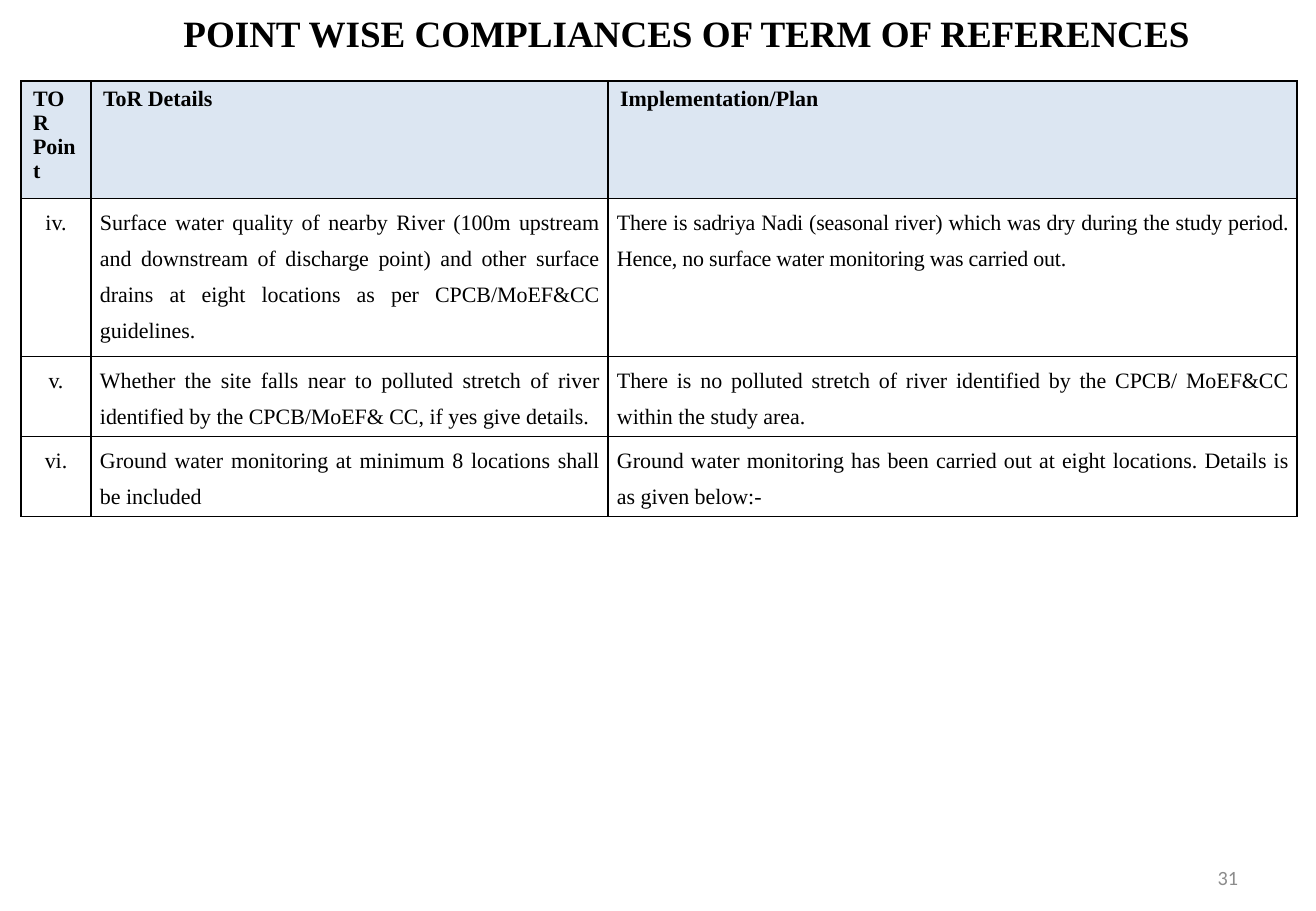
import pptx
import pptx.util
import pptx.dml.color
import pptx.enum.text
import pptx.oxml
import pptx.oxml.ns

SCALE = 914400 / 121.5
COLORS = {"ink": "000000", "head": "DCE6F2", "page": "8C8C8C"}
SERIF = "Times New Roman"
ALIGN = pptx.enum.text.PP_ALIGN
MIDDLE = pptx.enum.text.MSO_ANCHOR.MIDDLE

COLS = [70, 517, 689]
ROWS = [117, 158, 80, 80]
HEADS = ["TOR Point", "ToR Details", "Implementation/Plan"]
POINTS = [
    ["iv.",
     "Surface water quality of nearby River (100m upstream and downstream of "
     "discharge point) and other surface drains at eight locations as per "
     "CPCB/MoEF&CC guidelines.",
     "There is sadriya Nadi (seasonal river) which was dry during the study "
     "period. Hence, no surface water monitoring was carried out."],
    ["v.",
     "Whether the site falls near to polluted stretch of river identified by "
     "the CPCB/MoEF& CC, if yes give details.",
     "There is no polluted stretch of river identified by the CPCB/ MoEF&CC "
     "within the study area."],
    ["vi.",
     "Ground water monitoring at minimum 8 locations shall be included",
     "Ground water monitoring has been carried out at eight locations. "
     "Details is as given below:-"],
]


def px(count):
    return pptx.util.Emu(round(count * SCALE))


def rgb(name):
    return pptx.dml.color.RGBColor.from_string(COLORS[name])


def add_run(para, text, size, font=SERIF, color="ink", bold=False):
    run = para.add_run()
    run.text = text
    run.font.size = pptx.util.Pt(size)
    run.font.name = font
    run.font.bold = bold
    run.font.color.rgb = rgb(color)
    return run


def add_title(slide, text):
    title = slide.shapes.title
    title.left, title.top, title.width, title.height = map(px, (67, 4, 1239, 57))
    frame = title.text_frame
    frame.vertical_anchor = MIDDLE
    para = frame.paragraphs[0]
    para.alignment = ALIGN.CENTER
    add_run(para, text, 22, bold=True)


def add_page(slide, text):
    box = slide.shapes.add_textbox(*map(px, (943, 853, 307, 49)))
    frame = box.text_frame
    frame.word_wrap = True
    frame.vertical_anchor = MIDDLE
    para = frame.paragraphs[0]
    para.alignment = ALIGN.RIGHT
    add_run(para, text, 12, "Calibri", "page")


def add_edges(cell):
    """Draw a 1 pt line on all four sides, placed ahead of the cell fill."""
    props = cell._tc.get_or_add_tcPr()
    for spot, side in enumerate(("lnL", "lnR", "lnT", "lnB")):
        props.insert(spot, pptx.oxml.parse_xml(
            f'<a:{side} {pptx.oxml.ns.nsdecls("a")} w="12700"><a:solidFill>'
            f'<a:srgbClr val="{COLORS["ink"]}"/></a:solidFill></a:{side}>'))


def fill_head(cell, text):
    cell.fill.solid()
    cell.fill.fore_color.rgb = rgb("head")
    add_run(cell.text_frame.paragraphs[0], text, 13, bold=True)


def fill_body(cell, text, align):
    cell.fill.background()
    cell.margin_left = cell.margin_right = px(9)
    cell.margin_top = cell.margin_bottom = 0
    para = cell.text_frame.paragraphs[0]
    para.alignment = align
    para.line_spacing = 1.5
    para.space_after = pptx.util.Pt(6)
    return add_run(para, text, 13)


def add_grid(slide):
    frame = slide.shapes.add_table(
        len(ROWS), len(COLS), px(21), px(81), px(sum(COLS)), px(sum(ROWS)))
    table = frame.table
    table.first_row = table.horz_banding = False
    for col, width in zip(table.columns, COLS):
        col.width = px(width)
    for row, height in zip(table.rows, ROWS):
        row.height = px(height)
    for col, text in enumerate(HEADS):
        fill_head(table.cell(0, col), text)
    for row, texts in enumerate(POINTS, 1):
        for col, text in enumerate(texts):
            align = ALIGN.JUSTIFY if col else ALIGN.CENTER
            run = fill_body(table.cell(row, col), text, align)
            if (row, col) == (1, 2):
                run._r.get_or_add_rPr().set("spc", "-10")
    for cell in table.iter_cells():
        add_edges(cell)


def main():
    deck = pptx.Presentation()
    deck.slide_width, deck.slide_height = px(1316), px(911)
    slide = deck.slides.add_slide(deck.slide_layouts[5])
    add_page(slide, "31")
    add_title(slide, "POINT WISE COMPLIANCES OF TERM OF REFERENCES")
    add_grid(slide)
    deck.save("out.pptx")


if __name__ == "__main__":
    main()
